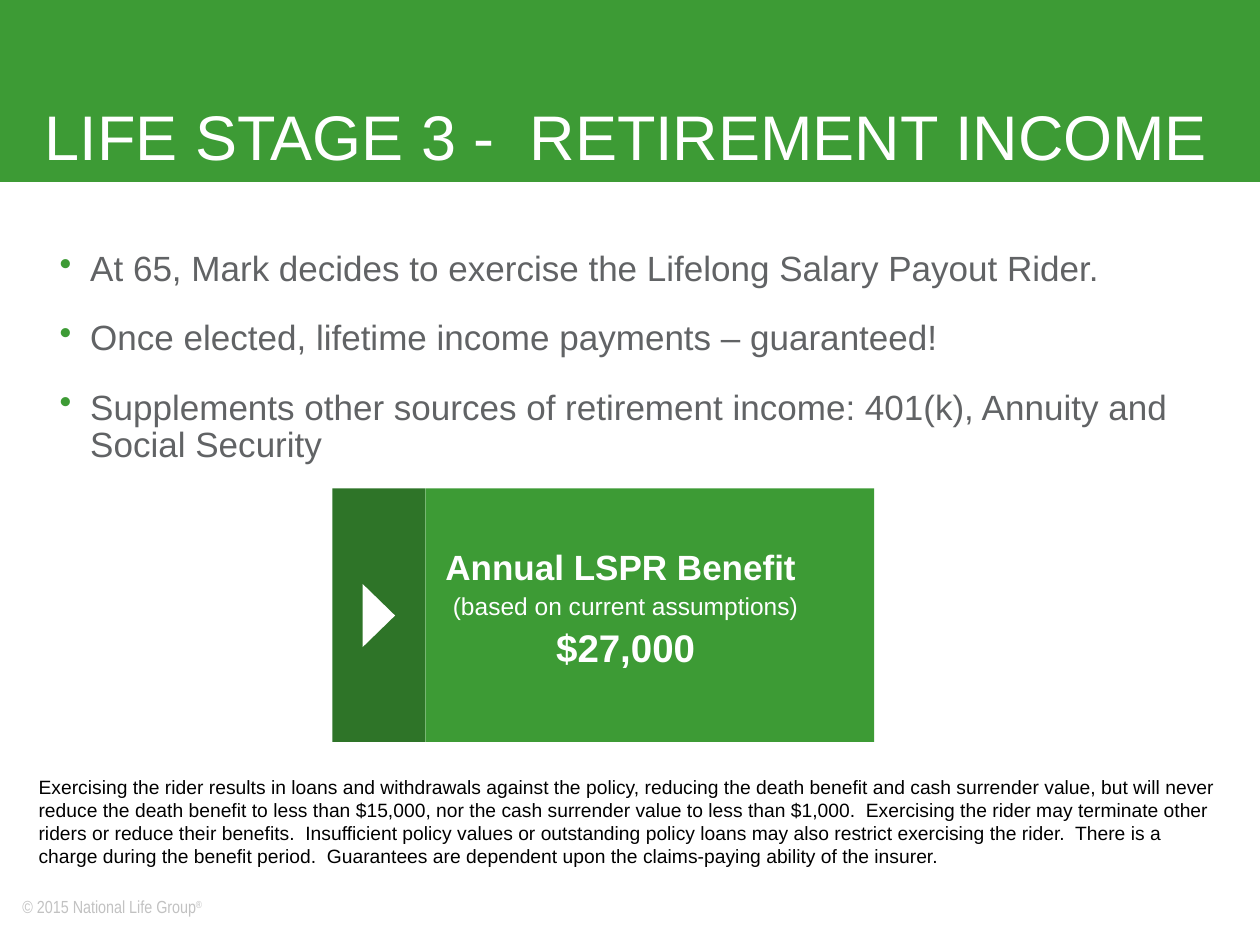
"""Build the retirement income slide with its benefit card and disclosure."""
from pptx import Presentation
from pptx.dml.color import RGBColor
from pptx.enum.shapes import MSO_SHAPE as Shape
from pptx.enum.text import MSO_ANCHOR as Anchor, PP_ALIGN as Align
from pptx.oxml import parse_xml
from pptx.oxml.ns import nsdecls
from pptx.util import Pt

GREEN = RGBColor(0x3D, 0x9B, 0x35)
DARK_GREEN = RGBColor(0x2E, 0x74, 0x28)
WHITE = RGBColor(0xFF, 0xFF, 0xFF)
GREY = RGBColor(0x61, 0x63, 0x65)
PALE_GREY = RGBColor(0xC2, 0xC2, 0xC2)
BLACK = RGBColor(0, 0, 0)

deck = Presentation()
deck.slide_width, deck.slide_height = Pt(720), Pt(540)
page = deck.slides.add_slide(deck.slide_layouts[6])


def add_box(left, top, width, height, anchor=Anchor.TOP):
    frame = page.shapes.add_textbox(Pt(left), Pt(top), Pt(width), Pt(height)).text_frame
    frame.word_wrap = True
    frame.vertical_anchor = anchor
    return frame


def add_span(para, text, size, color, bold=False, font="Arial"):
    span = para.add_run()
    span.text = text
    span.font.name, span.font.size, span.font.bold = font, Pt(size), bold
    span.font.color.rgb = color
    return span


SHAPES = [
    (Shape.RECTANGLE, 0, 0, 720, 104, 0, GREEN),
    (Shape.RECTANGLE, 190, 279, 53, 145, 0, DARK_GREEN),
    (Shape.ISOSCELES_TRIANGLE, 198.5, 342.5, 36, 18.5, 90, WHITE),
    (Shape.RECTANGLE, 243, 279, 256.5, 145, 0, GREEN),
]
for kind, left, top, width, height, turn, color in SHAPES:
    shape = page.shapes.add_shape(kind, Pt(left), Pt(top), Pt(width), Pt(height))
    shape.shadow.inherit = False
    shape.rotation = turn
    shape.fill.solid()
    shape.fill.fore_color.rgb = color
    shape.line.fill.background()

title = add_box(18.5, 13, 681.5, 90, Anchor.BOTTOM).paragraphs[0]
title.line_spacing = 0.9
add_span(title, "LIFE STAGE 3 -  RETIREMENT INCOME", 36, WHITE)

BULLETS = [
    "At 65, Mark decides to exercise the Lifelong Salary Payout Rider.",
    "Once elected, lifetime income payments – guaranteed!",
    "Supplements other sources of retirement income: 401(k), Annuity and Social Security",
]
body = add_box(26, 140, 678, 148)
for index, text in enumerate(BULLETS):
    para = body.paragraphs[0] if index == 0 else body.add_paragraph()
    para.line_spacing = 0.9
    para.space_before = Pt(12 if index else 0)
    para.space_after = Pt(6)
    props = para._p.get_or_add_pPr()
    props.set("marL", str(Pt(18.5)))
    props.set("indent", str(Pt(-17.5)))
    props.append(parse_xml(f'<a:buClr {nsdecls("a")}><a:srgbClr val="{GREEN}"/></a:buClr>'))
    props.append(parse_xml(f'<a:buChar {nsdecls("a")} char="•"/>'))
    add_span(para, text, 20, GREY)

BENEFIT = [
    ("Annual LSPR Benefit ", 20, True, 0),
    ("(based on current assumptions)", 14, False, 3.5),
    ("$27,000", 22, True, 5),
]
card = add_box(220, 311, 275, 80)
for index, (text, size, bold, gap) in enumerate(BENEFIT):
    para = card.paragraphs[0] if index == 0 else card.add_paragraph()
    para.alignment = Align.CENTER
    para.line_spacing = 0.9
    para.space_before = Pt(gap)
    add_span(para, text, size, WHITE, bold)

disclosure = add_box(15, 439.5, 689, 60).paragraphs[0]
add_span(
    disclosure,
    "Exercising the rider results in loans and withdrawals against the policy, reducing the "
    "death benefit and cash surrender value, but will never reduce the death benefit to less "
    "than $15,000, nor the cash surrender value to less than $1,000.  Exercising the rider may "
    "terminate other riders or reduce their benefits.  Insufficient policy values or outstanding "
    "policy loans may also restrict exercising the rider.  There is a charge during the benefit "
    "period.  Guarantees are dependent upon the claims-paying ability of the insurer.",
    11, BLACK)

copyright_line = add_box(5.75, 508.5, 148.5, 19.5, Anchor.MIDDLE).paragraphs[0]
add_span(copyright_line, "© 2015 National Life Group", 10, PALE_GREY, font="Arial Narrow")
mark = add_span(copyright_line, "®", 10, PALE_GREY, font="Arial Narrow")
mark._r.get_or_add_rPr().set("baseline", "30000")

deck.save("out.pptx")
